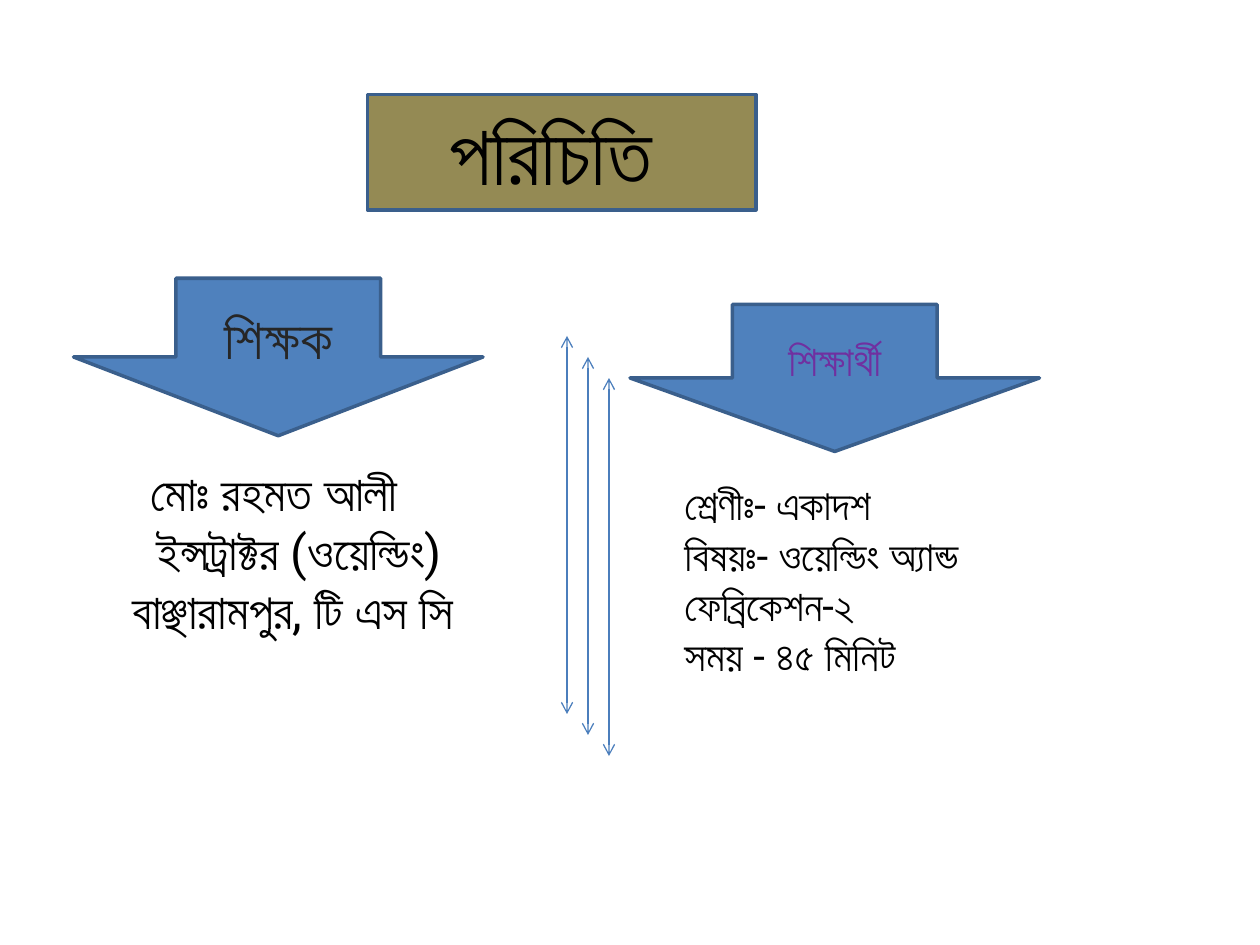
from dataclasses import dataclass

from lxml import etree
from pptx import Presentation
from pptx.dml.color import RGBColor
from pptx.enum.shapes import MSO_CONNECTOR, MSO_SHAPE
from pptx.enum.text import MSO_ANCHOR, MSO_AUTO_SIZE, PP_ALIGN
from pptx.oxml.ns import qn
from pptx.util import Pt

RECTANGLE = MSO_SHAPE.RECTANGLE
DOWN_ARROW = MSO_SHAPE.DOWN_ARROW
STRAIGHT = MSO_CONNECTOR.STRAIGHT
MIDDLE = MSO_ANCHOR.MIDDLE
FIT_TEXT = MSO_AUTO_SIZE.SHAPE_TO_FIT_TEXT
LEFT, CENTER = PP_ALIGN.LEFT, PP_ALIGN.CENTER


@dataclass(frozen=True)
class Theme:
    font: str = "Roboto"
    black: str = "000000"
    charcoal: str = "262626"
    purple: str = "7030A0"
    olive: str = "948A54"
    blue: str = "4F81BD"
    outline: str = "3A5F8C"
    divider: str = "4B7EBC"
    title_size: int = 48
    teacher_size: int = 32
    name_size: int = 28
    body_size: int = 24


class SlideBuilder:
    def __init__(self, slide, theme):
        self.slide = slide
        self.theme = theme

    def add_lines(self, para, text, size, color, align):
        """Add text to a paragraph, one run per line."""
        para.alignment = align
        for number, line in enumerate(text.split("\n")):
            if number:
                para.add_line_break()
            span = para.add_run()
            span.text = line
            span.font.name = self.theme.font
            span.font.size = Pt(size)
            span.font.color.rgb = RGBColor.from_string(color)

    def shape(self, kind, frame, fill, text, size, color):
        box = self.slide.shapes.add_shape(kind, *map(Pt, frame))
        box.shadow.inherit = False
        box.fill.solid()
        box.fill.fore_color.rgb = RGBColor.from_string(fill)
        box.line.color.rgb = RGBColor.from_string(self.theme.outline)
        box.line.width = Pt(2)
        box.text_frame.vertical_anchor = MIDDLE
        self.add_lines(box.text_frame.paragraphs[0], text, size, color, CENTER)

    def text(self, frame, paragraphs, size):
        """Each paragraph is (text, alignment, left margin)."""
        box = self.slide.shapes.add_textbox(*map(Pt, frame))
        content = box.text_frame
        content.word_wrap = True
        content.auto_size = FIT_TEXT
        for number, (text, align, margin) in enumerate(paragraphs):
            para = content.add_paragraph() if number else content.paragraphs[0]
            self.add_lines(para, text, size, self.theme.black, align)
            if margin:
                para._p.get_or_add_pPr().set("marL", str(Pt(margin)))

    def double_arrow(self, x, top, height):
        arrow = self.slide.shapes.add_connector(
            STRAIGHT, Pt(x), Pt(top), Pt(x), Pt(top + height))
        arrow.line.color.rgb = RGBColor.from_string(self.theme.divider)
        arrow.line.width = Pt(0.75)
        line = arrow.line._get_or_add_ln()
        for end in ("a:headEnd", "a:tailEnd"):
            etree.SubElement(line, qn(end), type="arrow")
        etree.SubElement(arrow._element.spPr, qn("a:effectLst"))


def main():
    deck = Presentation()
    deck.slide_width, deck.slide_height = Pt(720), Pt(540)
    theme = Theme()
    page = SlideBuilder(deck.slides.add_slide(deck.slide_layouts[6]), theme)

    # Title
    page.shape(RECTANGLE, (210, 54, 222, 66), theme.olive,
               "পরিচিতি ", theme.title_size, theme.black)

    # Class details
    page.text((384, 270, 252, 124), [
        ("শ্রেণীঃ- একাদশ", LEFT, 0),
        ("বিষয়ঃ- ওয়েল্ডিং অ্যান্ড ফেব্রিকেশন-২", LEFT, 0),
        ("সময় - ৪৫ মিনিট", LEFT, 0),
    ], theme.body_size)

    # Staggered divider arrows
    for step in range(3):
        page.double_arrow(324 + 12 * step, 192 + 12 * step, 216)

    # Column headings
    page.shape(DOWN_ARROW, (360, 174, 234, 84), theme.blue,
               "শিক্ষার্থী", theme.body_size, theme.purple)
    page.shape(DOWN_ARROW, (42, 159, 234, 90), theme.blue,
               "শিক্ষক", theme.teacher_size, theme.charcoal)

    # Teacher details
    page.text((24, 261, 294, 109), [
        ("মোঃ রহমত আলী", LEFT, 55),
        ("ইন্সট্রাক্টর (ওয়েল্ডিং)\nবাঞ্ছারামপুর, টি এস সি ", CENTER, 0),
    ], theme.name_size)

    deck.save("out.pptx")


if __name__ == "__main__":
    main()
